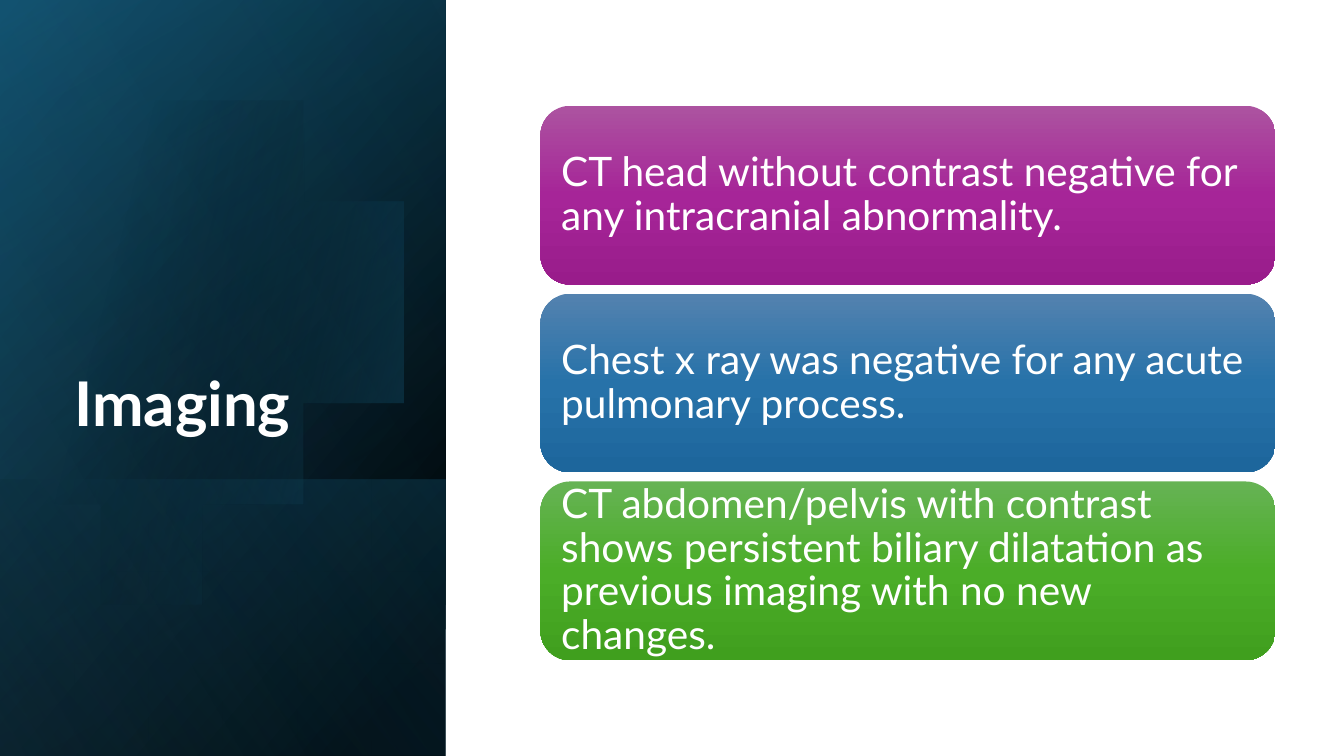
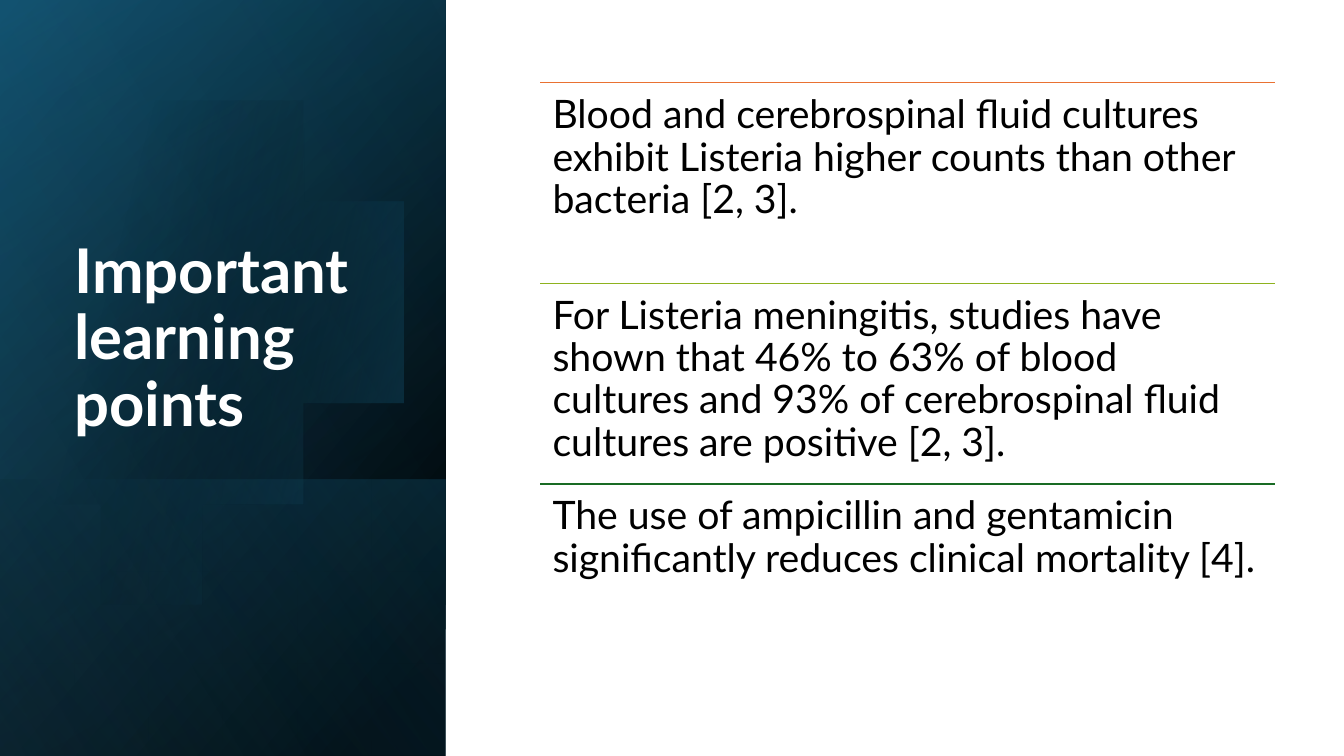
from math import acos, cos, pi, sin

from lxml.etree import SubElement
from pptx import Presentation
from pptx.dml.color import RGBColor
from pptx.enum.shapes import MSO_CONNECTOR, MSO_SHAPE
from pptx.enum.text import MSO_ANCHOR, MSO_AUTO_SIZE, PP_ALIGN
from pptx.oxml.ns import qn
from pptx.util import Inches, Pt

BLACK = RGBColor(0x00, 0x00, 0x00)
WHITE = RGBColor(0xFF, 0xFF, 0xFF)
NAVY = RGBColor(0x10, 0x48, 0x62)
TEAL = RGBColor(0x15, 0x60, 0x82)
SKY = RGBColor(0x46, 0xB1, 0xE1)
ORANGE = RGBColor(0xE9, 0x71, 0x32)
LIME = RGBColor(0x8E, 0xB2, 0x1E)
GREEN = RGBColor(0x19, 0x6B, 0x24)
PLUM_FADE = [RGBColor.from_string(c) for c in ("AC53A0", "A62598", "991C8B")]
BLUE_FADE = [RGBColor.from_string(c) for c in ("5382AF", "2772A9", "1D669C")]
LEAF_FADE = [RGBColor.from_string(c) for c in ("66B354", "4BAD28", "409F1E")]

FONT = "Lato"
PANEL = (0, 0, 4.42, 7.5)
FOOT = (0, 4.76, 4.42, 2.74)
DISC = (1.43, 3.37, 2.28)  # centre x, centre y, radius
TITLE = (0.64, 1.84, 3.41, 2.62)
CARDS = (5.36, 1.05, 7.29, 5.5)
POINTS = (5.36, 0.82, 7.29, 5.97)
CARD_GAP = 0.09

TITLE_FONT = {"name": FONT, "size": Pt(44), "bold": True}
CARD_FONT = {"name": FONT, "size": Pt(29)}
POINT_FONT = {"name": FONT, "size": Pt(28)}

IMAGING = [
    ("CT head without contrast negative for any intracranial abnormality.", PLUM_FADE),
    ("Chest x ray was negative for any acute pulmonary process.", BLUE_FADE),
    ("CT abdomen/pelvis with contrast shows persistent biliary dilatation as "
     "previous imaging with no new changes.", LEAF_FADE),
]
LESSONS = [
    ("Blood and cerebrospinal fluid cultures exhibit Listeria higher counts "
     "than other bacteria [2, 3].", ORANGE),
    ("For Listeria meningitis, studies have shown that 46% to 63% of blood "
     "cultures and 93% of cerebrospinal fluid cultures are positive [2, 3].", LIME),
    ("The use of ampicillin and gentamicin significantly reduces clinical "
     "mortality [4].", GREEN),
]


def inches(box):
    return [Inches(v) for v in box]


def shade(shape, stops, angle):
    """Fill with a linear gradient of (place, colour, opacity) stops, in percent."""
    shape.shadow.inherit = False
    shape.line.fill.background()
    shape.fill.background()
    props = shape._element.spPr
    grad = SubElement(props, qn("a:gradFill"), rotWithShape="1")
    props.replace(props.find(qn("a:noFill")), grad)
    group = SubElement(grad, qn("a:gsLst"))
    for place, color, alpha in stops:
        stop = SubElement(group, qn("a:gs"), pos=str(place * 1000))
        tint = SubElement(stop, qn("a:srgbClr"), val=str(color))
        if alpha < 100:
            SubElement(tint, qn("a:alpha"), val=str(alpha * 1000))
    SubElement(grad, qn("a:lin"), ang=str(angle * 60000), scaled="0")


def write(shape, text, font, color, anchor, inset):
    frame = shape.text_frame
    style = {"word_wrap": True, "auto_size": MSO_AUTO_SIZE.NONE,
             "vertical_anchor": anchor}
    style.update({f"margin_{side}": Inches(inset)
                  for side in ("left", "top", "right", "bottom")})
    for key, value in style.items():
        setattr(frame, key, value)
    para = frame.paragraphs[0]
    para.alignment = PP_ALIGN.LEFT
    para.line_spacing = 0.9
    run = para.add_run()
    run.text = text
    for key, value in font.items():
        setattr(run.font, key, value)
    run.font.color.rgb = color


def add_layer(slide, box, stops, angle):
    """Add a rectangle, mirrored and turned by 90 degrees, that covers the box."""
    left, top, width, height = box
    shift = (width - height) / 2
    layer = slide.shapes.add_shape(
        MSO_SHAPE.RECTANGLE, *inches((left + shift, top - shift, height, width)))
    layer.rotation = 90
    layer._element.spPr.xfrm.set("flipH", "1")
    shade(layer, stops, angle)


def add_disc(slide, disc):
    """Add a disc that is cut off at the left edge of the slide."""
    x, y, radius = disc
    limit = acos(-x / radius)
    count = 90
    turns = [limit * (2 * i / count - 1) for i in range(count + 1)]
    dots = [(x + radius * cos(t), y + radius * sin(t)) for t in turns]
    build = slide.shapes.build_freeform(*dots[0], scale=Inches(1))
    build.add_line_segments(dots[1:], close=True)
    shade(build.convert_to_shape(), [(29, BLACK, 0), (100, TEAL, 43)], 14)


def add_panel(slide, title):
    add_layer(slide, PANEL, [(8, BLACK, 100), (100, NAVY, 100)], 50)
    add_layer(slide, PANEL, [(0, BLACK, 0), (99, TEAL, 46)], 30)
    add_layer(slide, FOOT, [(2, TEAL, 29), (100, BLACK, 30)], 130)
    add_disc(slide, DISC)
    add_layer(slide, PANEL, [(0, BLACK, 0), (99, SKY, 11)], 120)
    label = slide.shapes.add_textbox(*inches(TITLE))
    write(label, title, TITLE_FONT, WHITE, MSO_ANCHOR.BOTTOM, 0.1)


def split(box, count, gap=0):
    """Yield equal rows of the box, from top to bottom."""
    left, top, width, height = box
    row = (height - gap * (count - 1)) / count
    for i in range(count):
        yield left, top + i * (row + gap), width, row


def add_cards(slide, box, items):
    for place, (text, fade) in zip(split(box, len(items), CARD_GAP), items):
        card = slide.shapes.add_shape(MSO_SHAPE.ROUNDED_RECTANGLE, *inches(place))
        shade(card, [(i * 50, color, 100) for i, color in enumerate(fade)], 90)
        write(card, text, CARD_FONT, WHITE, MSO_ANCHOR.MIDDLE, 0.12)


def add_points(slide, box, items):
    for place, (text, color) in zip(split(box, len(items)), items):
        left, top, width, _ = place
        rule = slide.shapes.add_connector(
            MSO_CONNECTOR.STRAIGHT, *inches((left, top, left + width, top)))
        rule.line.color.rgb = color
        rule.line.width = Pt(1)
        SubElement(rule._element.spPr, qn("a:effectLst"))
        point = slide.shapes.add_textbox(*inches(place))
        write(point, text, POINT_FONT, BLACK, MSO_ANCHOR.TOP, 0.12)


def main():
    deck = Presentation()
    deck.slide_width, deck.slide_height = Inches(13.33), Inches(7.5)
    pages = [("Imaging", add_cards, CARDS, IMAGING),
             ("Important learning points", add_points, POINTS, LESSONS)]
    for title, add_body, box, items in pages:
        slide = deck.slides.add_slide(deck.slide_layouts[6])
        add_panel(slide, title)
        add_body(slide, box, items)
    deck.save("out.pptx")


if __name__ == "__main__":
    main()
